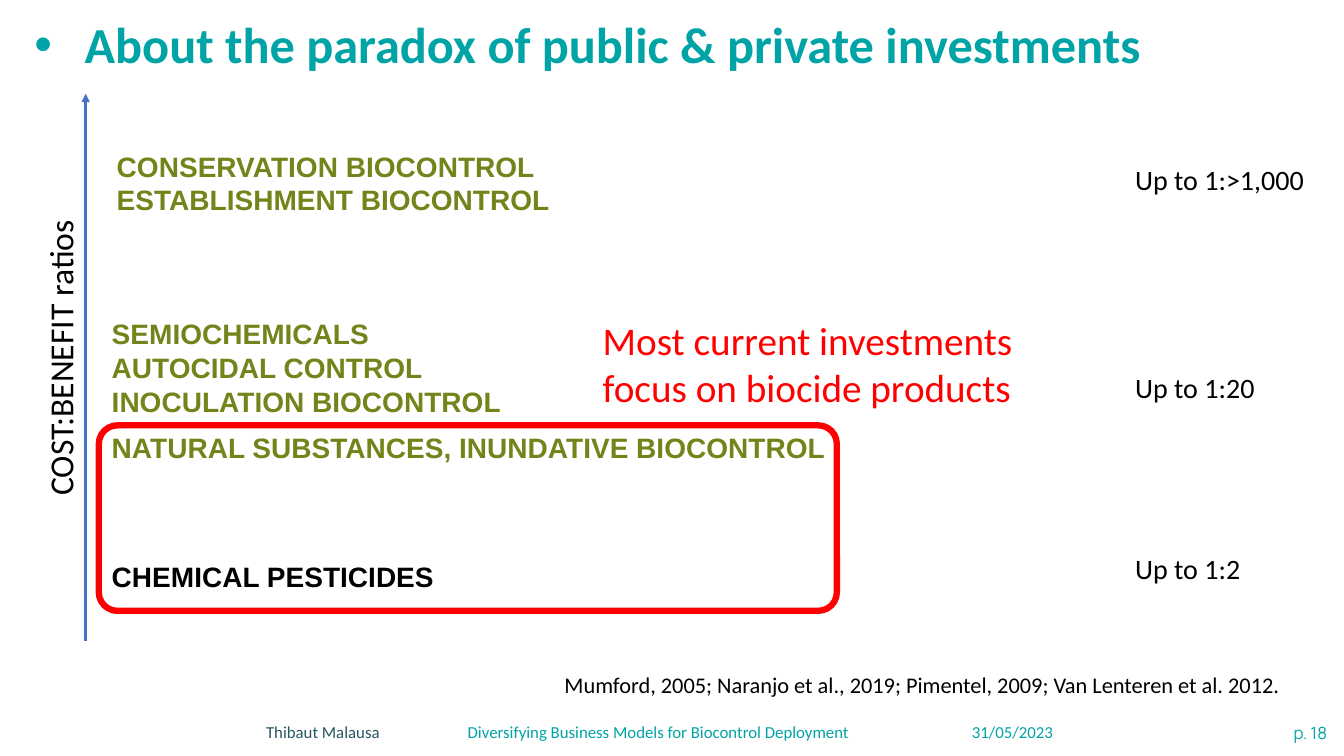
from dataclasses import dataclass

import lxml.etree
import pptx
import pptx.dml.color
import pptx.enum.shapes
import pptx.enum.text
import pptx.oxml.ns
import pptx.slide
import pptx.text.text
import pptx.util

Inches = pptx.util.Inches
RGBColor = pptx.dml.color.RGBColor
PP_ALIGN = pptx.enum.text.PP_ALIGN
qn = pptx.oxml.ns.qn

TEAL = RGBColor(0x00, 0xA3, 0xA6)
SLATE = RGBColor(0x27, 0x56, 0x62)
OLIVE = RGBColor(0x72, 0x84, 0x1A)
BLUE = RGBColor(0x44, 0x72, 0xC4)
RED = RGBColor(0xFF, 0x00, 0x00)
BLACK = RGBColor(0x00, 0x00, 0x00)


@dataclass(frozen=True)
class Label:
    text: str
    left: float
    top: float
    width: float
    height: float
    size: int = 20
    color: RGBColor = BLACK
    font: str = "Calibri"
    bold: bool = False
    rotation: int = 0
    alignment: PP_ALIGN = PP_ALIGN.LEFT
    wrap: bool = True


def method(text: str, left: float, top: float, width: float, height: float = 0.44,
           color: RGBColor = OLIVE) -> Label:
    return Label(text, left, top, width, height, color=color, font="Arial", bold=True)


def ratio(text: str, top: float, width: float = 1.47) -> Label:
    return Label(text, 11.16, top, width, 0.44)


LABELS = [
    method("CONSERVATION BIOCONTROL\nESTABLISHMENT BIOCONTROL", 1.06, 1.43, 5.24, 0.77),
    method("SEMIOCHEMICALS\nAUTOCIDAL CONTROL", 1.01, 3.09, 5.01, 0.77),
    method("INOCULATION BIOCONTROL", 1.01, 3.77, 5.01),
    method("NATURAL SUBSTANCES, INUNDATIVE BIOCONTROL", 1.01, 4.22, 10.89),
    method("CHEMICAL PESTICIDES", 1.01, 5.5, 4.04, color=BLACK),
    ratio("Up to 1:>1,000", 1.56, 1.93),
    ratio("Up to 1:20", 3.63),
    ratio("Up to 1:2", 5.42),
    Label("COST:BENEFIT ratios", -0.9, 3.27, 2.99, 0.5, size=24, rotation=270),
    Label("Mumford, 2005; Naranjo et al., 2019; Pimentel, 2009; Van Lenteren et al. 2012.",
          5.5, 6.61, 7.39, 0.37, size=16, wrap=False),
    Label("Most current investments focus on biocide products",
          5.88, 3.09, 4.83, 1.04, size=28, color=RED),
    Label("p. 18", 10.98, 7.12, 2.28, 0.3, size=12, color=TEAL, font="Manrope",
          alignment=PP_ALIGN.RIGHT),
]


def format_font(font: pptx.text.text.Font, name: str, size: int, color: RGBColor,
                bold: bool = False) -> None:
    font.name = name
    font.size = pptx.util.Pt(size)
    font.bold = bold
    font.color.rgb = color


def add_label(slide: pptx.slide.Slide, label: Label) -> None:
    shape = slide.shapes.add_textbox(Inches(label.left), Inches(label.top),
                                     Inches(label.width), Inches(label.height))
    shape.rotation = label.rotation
    text_frame = shape.text_frame
    text_frame.word_wrap = label.wrap
    text_frame.text = label.text
    for paragraph in text_frame.paragraphs:
        paragraph.alignment = label.alignment
        for run in paragraph.runs:
            format_font(run.font, label.font, label.size, label.color, label.bold)


def add_title(slide: pptx.slide.Slide, text: str) -> None:
    title = slide.shapes.title
    title.left, title.top = Inches(0.34), Inches(0.1)
    title.width, title.height = Inches(12.54), Inches(0.73)
    text_frame = title.text_frame
    text_frame.text = text
    text_frame.word_wrap = True
    text_frame.auto_size = pptx.enum.text.MSO_AUTO_SIZE.NONE
    text_frame.vertical_anchor = pptx.enum.text.MSO_ANCHOR.MIDDLE
    text_frame.margin_left = 0
    paragraph = text_frame.paragraphs[0]
    paragraph.alignment = PP_ALIGN.LEFT
    paragraph.line_spacing = 0.9
    properties = paragraph._p.get_or_add_pPr()
    properties.set("marL", str(Inches(0.5)))
    properties.set("indent", str(-Inches(0.5)))
    lxml.etree.SubElement(properties, qn("a:buFont")).set("typeface", "Arial")
    lxml.etree.SubElement(properties, qn("a:buChar")).set("char", "•")
    format_font(paragraph.runs[0].font, "Calibri", 36, TEAL, True)


def add_footer(slide: pptx.slide.Slide) -> None:
    shape = slide.shapes.add_textbox(Inches(2.54), Inches(7.11), Inches(8.89), Inches(0.3))
    shape.text_frame.word_wrap = True
    paragraph = shape.text_frame.paragraphs[0]
    tabs = lxml.etree.SubElement(paragraph._p.get_or_add_pPr(), qn("a:tabLst"))
    for position in (2, 7):
        tab = lxml.etree.SubElement(tabs, qn("a:tab"))
        tab.set("pos", str(Inches(position)))
        tab.set("algn", "l")
    parts = [
        ("Thibaut Malausa\t", SLATE),
        ("Diversifying Business Models for Biocontrol Deployment\t31/05/2023", TEAL),
    ]
    for text, color in parts:
        run = paragraph.add_run()
        run.text = text
        format_font(run.font, "Calibri", 12, color)


def add_ratio_axis(slide: pptx.slide.Slide) -> None:
    axis = slide.shapes.add_connector(pptx.enum.shapes.MSO_CONNECTOR.STRAIGHT,
                                      Inches(0.85), Inches(6.36), Inches(0.85), Inches(0.93))
    axis.line.color.rgb = BLUE
    axis.line.width = pptx.util.Pt(2)
    arrowhead = lxml.etree.SubElement(axis.line._get_or_add_ln(), qn("a:tailEnd"))
    arrowhead.set("type", "triangle")
    lxml.etree.SubElement(axis._element.spPr, qn("a:effectLst"))


def add_biocide_frame(slide: pptx.slide.Slide) -> None:
    frame = slide.shapes.add_shape(pptx.enum.shapes.MSO_SHAPE.ROUNDED_RECTANGLE,
                                   Inches(0.98), Inches(4.22), Inches(7.32), Inches(1.84))
    frame.adjustments[0] = 0.1
    frame.shadow.inherit = False
    frame.fill.background()
    frame.line.color.rgb = RED
    frame.line.width = pptx.util.Pt(4.5)


def main() -> None:
    presentation = pptx.Presentation()
    presentation.slide_width = Inches(13.33)
    presentation.slide_height = Inches(7.5)
    slide = presentation.slides.add_slide(presentation.slide_layouts[5])
    add_title(slide, "About the paradox of public & private investments")
    add_ratio_axis(slide)
    for label in LABELS:
        add_label(slide, label)
    add_biocide_frame(slide)
    add_footer(slide)
    presentation.save("out.pptx")


if __name__ == "__main__":
    main()
